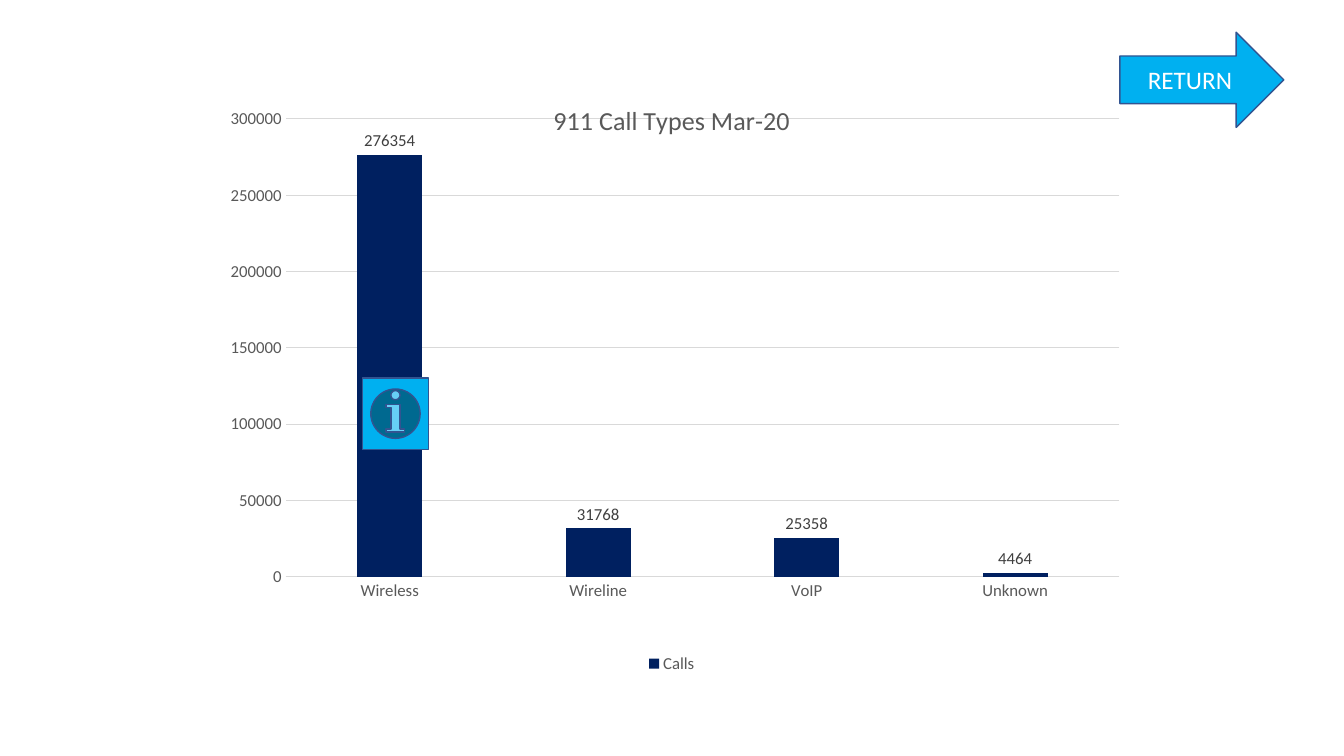
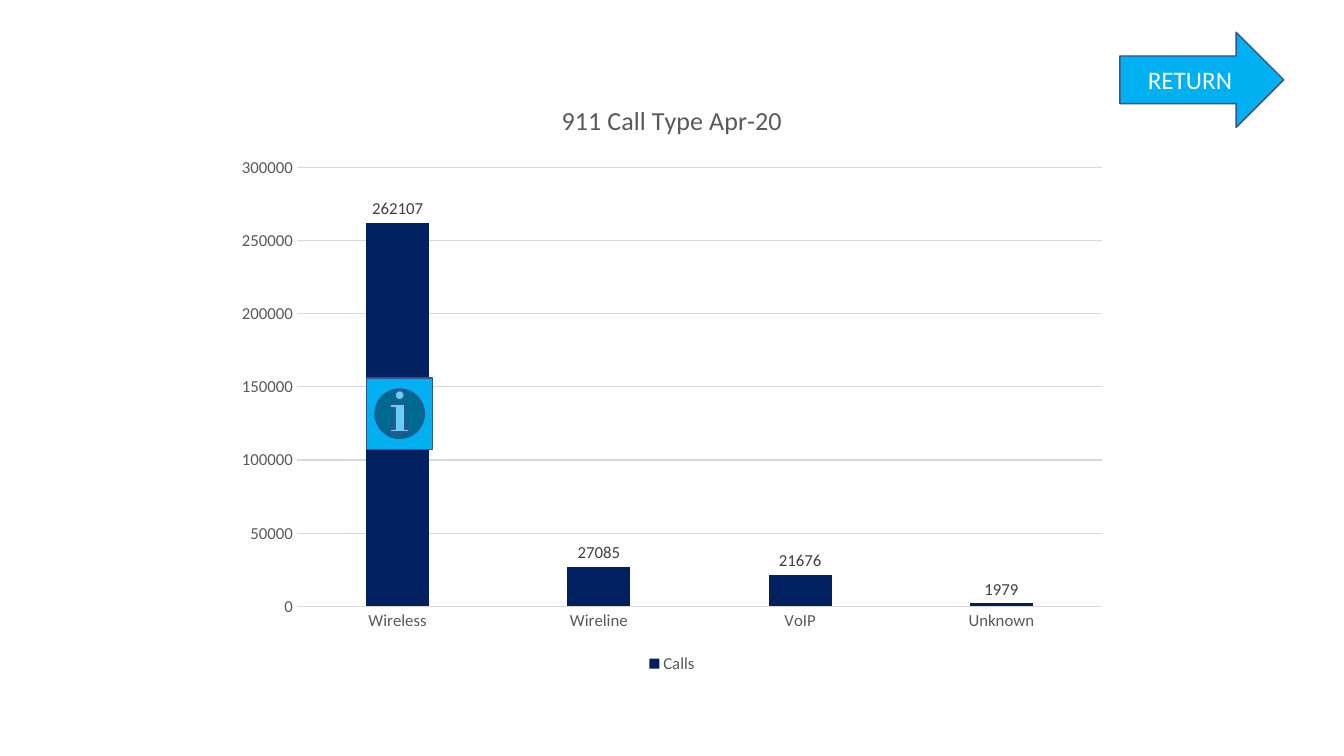
from lxml.etree import SubElement
from pptx import Presentation
from pptx.chart.data import CategoryChartData
from pptx.dml.color import RGBColor
from pptx.enum.chart import XL_CHART_TYPE as ChartType
from pptx.enum.chart import XL_LABEL_POSITION as LabelPosition
from pptx.enum.chart import XL_LEGEND_POSITION as LegendPosition
from pptx.enum.chart import XL_TICK_MARK as TickMark
from pptx.enum.shapes import MSO_SHAPE as Preset
from pptx.enum.text import MSO_ANCHOR as Anchor
from pptx.enum.text import PP_ALIGN as Align
from pptx.oxml.ns import qn
from pptx.util import Pt

NAVY = RGBColor(0x00, 0x20, 0x60)
SKY = RGBColor(0x00, 0xB0, 0xF0)
OUTLINE = RGBColor(0x32, 0x54, 0x91)
WHITE = RGBColor(0xFF, 0xFF, 0xFF)
GRID_GRAY = RGBColor(0xD9, 0xD9, 0xD9)
TEXT_GRAY = RGBColor(0x59, 0x59, 0x59)
LABEL_GRAY = RGBColor(0x40, 0x40, 0x40)

FONT = "Calibri"
CHART_WIDTH, CHART_HEIGHT = 640, 427
CATEGORIES = ["Wireless", "Wireline", "VoIP", "Unknown"]

MONTHS = [
    {
        "title": "911 Call Types Mar-20",
        "calls": [276354, 31768, 25358, 2666],
        "label_overrides": {3: "4464"},
        "plot_box": (44, 28, 596, 327),
        "button_left": 259,
    },
    {
        "title": "911 Call Type Apr-20",
        "calls": [262107, 27085, 21676, 1979],
        "label_overrides": {},
        "plot_box": None,
        "button_left": 262,
    },
]


def format_font(font, size, color):
    font.name = FONT
    font.size = Pt(size)
    font.bold = False
    font.color.rgb = color


def write_text(text_frame, text, size=12, color=TEXT_GRAY, align=Align.CENTER):
    paragraph = text_frame.paragraphs[0]
    paragraph.alignment = align
    run = paragraph.add_run()
    run.text = text
    format_font(run.font, size, color)


def format_line(line, color, width):
    line.color.rgb = color
    line.width = Pt(width)


def add_button(slide, preset, left, top, width, height):
    shape = slide.shapes.add_shape(preset, Pt(left), Pt(top), Pt(width), Pt(height))
    shape.shadow.inherit = False
    shape.fill.solid()
    shape.fill.fore_color.rgb = SKY
    format_line(shape.line, OUTLINE, 1)
    return shape


def add_return_arrow(slide):
    arrow = add_button(slide, Preset.RIGHT_ARROW, 800, 23, 117, 68)
    arrow.text_frame.vertical_anchor = Anchor.MIDDLE
    write_text(arrow.text_frame, "RETURN", size=18, color=WHITE)


def place_plot(chart, left, top, width, height):
    plot_area = chart.element.find(".//" + qn("c:plotArea"))
    for layout in plot_area.findall(qn("c:layout")):
        plot_area.remove(layout)
    layout = SubElement(plot_area, qn("c:layout"))
    plot_area.insert(0, layout)
    manual = SubElement(layout, qn("c:manualLayout"))
    settings = {
        "layoutTarget": "inner",
        "xMode": "edge",
        "yMode": "edge",
        "x": left / CHART_WIDTH,
        "y": top / CHART_HEIGHT,
        "w": width / CHART_WIDTH,
        "h": height / CHART_HEIGHT,
    }
    for name, value in settings.items():
        SubElement(manual, qn(f"c:{name}")).set("val", str(value))


def format_axes(chart):
    for axis in (chart.category_axis, chart.value_axis):
        axis.major_tick_mark = TickMark.NONE
        axis.minor_tick_mark = TickMark.NONE
        format_font(axis.tick_labels.font, 12, TEXT_GRAY)
    format_line(chart.category_axis.format.line, GRID_GRAY, 0.75)
    value_axis = chart.value_axis
    value_axis.minimum_scale = 0
    value_axis.maximum_scale = 300000
    value_axis.major_unit = 50000
    value_axis.format.line.fill.background()
    value_axis.has_major_gridlines = True
    format_line(value_axis.major_gridlines.format.line, GRID_GRAY, 0.75)


def format_columns(plot, label_overrides):
    plot.gap_width = 219
    plot.overlap = -27
    plot.vary_by_categories = False
    series = plot.series[0]
    series.format.fill.solid()
    series.format.fill.fore_color.rgb = NAVY
    labels = series.data_labels
    labels.show_value = True
    labels.position = LabelPosition.OUTSIDE_END
    format_font(labels.font, 12, LABEL_GRAY)
    for index, text in label_overrides.items():
        label = series.points[index].data_label
        write_text(label.text_frame, text, color=LABEL_GRAY)
        label.position = LabelPosition.OUTSIDE_END


def add_calls_chart(slide, title, calls, label_overrides, plot_box):
    data = CategoryChartData()
    data.categories = CATEGORIES
    data.add_series("Calls", calls)
    chart = slide.shapes.add_chart(
        ChartType.COLUMN_CLUSTERED,
        Pt(160), Pt(57), Pt(CHART_WIDTH), Pt(CHART_HEIGHT), data,
    ).chart
    format_font(chart.font, 12, TEXT_GRAY)
    chart.has_title = True
    write_text(chart.chart_title.text_frame, title, size=18.6)
    chart.has_legend = True
    chart.legend.position = LegendPosition.BOTTOM
    chart.legend.include_in_layout = False
    format_font(chart.legend.font, 12, TEXT_GRAY)
    format_axes(chart)
    format_columns(chart.plots[0], label_overrides)
    if plot_box:
        place_plot(chart, *plot_box)


def add_month_slide(presentation, button_left, **chart_options):
    slide = presentation.slides.add_slide(presentation.slide_layouts[6])
    add_calls_chart(slide, **chart_options)
    add_button(slide, Preset.ACTION_BUTTON_INFORMATION, button_left, 270, 47, 51)
    add_return_arrow(slide)


def main():
    presentation = Presentation()
    presentation.slide_width = Pt(960)
    presentation.slide_height = Pt(540)
    for month in MONTHS:
        add_month_slide(presentation, **month)
    presentation.save("out.pptx")


if __name__ == "__main__":
    main()
